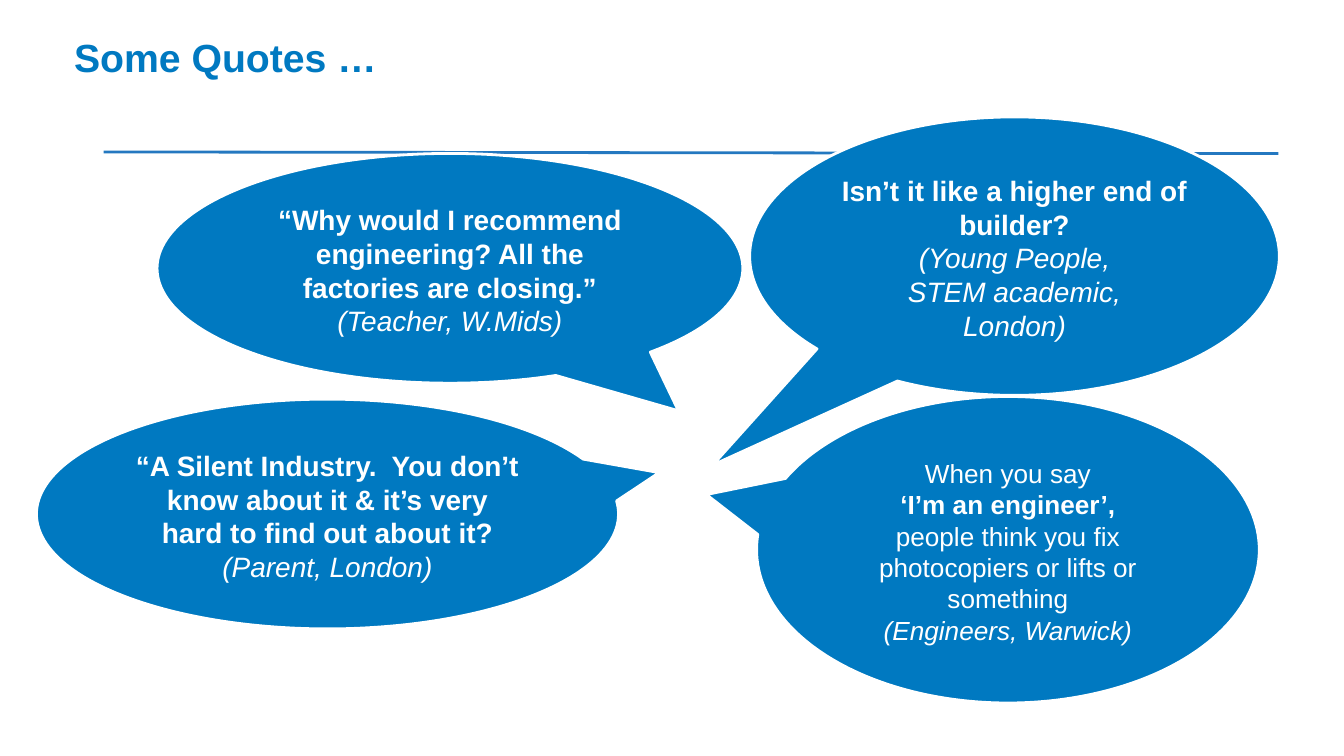
from pptx import Presentation
from pptx.dml.color import RGBColor
from pptx.enum.shapes import MSO_CONNECTOR, MSO_SHAPE
from pptx.enum.text import MSO_ANCHOR, PP_ALIGN
from pptx.oxml.ns import qn
from pptx.util import Cm, Pt
from lxml import etree

CALLOUT = MSO_SHAPE.OVAL_CALLOUT
STRAIGHT = MSO_CONNECTOR.STRAIGHT
TOP, MIDDLE = MSO_ANCHOR.TOP, MSO_ANCHOR.MIDDLE
CENTER = PP_ALIGN.CENTER

COLORS = {"blue": "0079C1", "rule": "2478C0", "white": "FFFFFF"}
FONT = "Arial"
PLAIN, BOLD, ITALIC = (False, False), (True, False), (False, True)

QUOTES = [
    {"box": (14.17, 2.21, 10.01, 5.26), "tail": (-0.57, 0.75), "size": 15, "anchor": TOP,
     "text": [[("Isn’t it like a higher end of builder?", BOLD)],
              [("(Young People,", ITALIC)],
              [("STEM academic,", ITALIC)],
              [("London)", ITALIC)]]},
    {"box": (0.69, 7.54, 11, 4.34), "tail": (0.57, -0.18), "size": 15, "anchor": TOP,
     "text": [[("“A Silent Industry.  You don’t know about it & it’s very hard "
                "to find out about it?", BOLD)],
              [("(Parent, London)", ITALIC)]]},
    {"box": (14.3, 7.49, 9.5, 5.79), "tail": (-0.6, -0.18), "size": 14, "anchor": TOP,
     "text": [[("When you say", PLAIN),
               ("‘I’m an engineer’,", BOLD),
               ("people think you fix photocopiers or lifts or something", PLAIN)],
              [("(Engineers, Warwick)", ITALIC)]]},
    {"box": (2.97, 2.9, 11.07, 4.34), "tail": (0.39, 0.62), "size": 15, "anchor": MIDDLE,
     "text": [[("“Why would I recommend engineering? All the factories are closing.”", BOLD)],
              [("(Teacher, W.Mids)", ITALIC)]]},
]


def rgb(name):
    return RGBColor.from_string(COLORS[name])


def set_frame(tf, anchor, left, top, right, bottom):
    tf.word_wrap = True
    tf.vertical_anchor = anchor
    tf.margin_left, tf.margin_top = Cm(left), Cm(top)
    tf.margin_right, tf.margin_bottom = Cm(right), Cm(bottom)


def add_run(p, text, size, color, style):
    r = p.add_run()
    r.text = text
    r.font.name = FONT
    r.font.size = Pt(size)
    r.font.color.rgb = rgb(color)
    r.font.bold, r.font.italic = style


def add_heading(s, box):
    x, y, w, h = box
    title = s.shapes.add_textbox(Cm(x), Cm(y), Cm(w), Cm(h))
    set_frame(title.text_frame, MIDDLE, 0.18, 0.1, 0.18, 0.1)
    add_run(title.text_frame.paragraphs[0], "Some Quotes …", 21, "blue", BOLD)

    rule = s.shapes.add_connector(STRAIGHT, Cm(x + 0.74), Cm(y + 2.34),
                                  Cm(x + 22.94), Cm(y + 2.37))
    rule.line.color.rgb = rgb("rule")
    rule.line.width = Pt(1.5)
    etree.SubElement(rule._element.spPr, qn("a:effectLst"))


def add_quote(s, box, tail, size, anchor, text):
    sp = s.shapes.add_shape(CALLOUT, *[Cm(v) for v in box])
    sp.adjustments[0], sp.adjustments[1] = tail
    sp.shadow.inherit = False
    sp.fill.solid()
    sp.fill.fore_color.rgb = rgb("blue")
    sp.line.color.rgb = rgb("white")
    sp.line.width = Pt(1.5)
    tf = sp.text_frame
    set_frame(tf, anchor, 0.23, 0.3, 0.23, 0.23)
    for i, lines in enumerate(text):
        p = tf.add_paragraph() if i else tf.paragraphs[0]
        p.alignment = CENTER
        p.font.size = Pt(size)
        for j, (words, style) in enumerate(lines):
            if j:
                p.add_line_break()
            add_run(p, words, size, "white", style)


def main():
    prs = Presentation()
    prs.slide_width, prs.slide_height = Cm(25.4), Cm(14.28)
    s = prs.slides.add_slide(prs.slide_layouts[6])
    add_heading(s, (1.22, 0.53, 17.09, 1.09))
    for quote in QUOTES:
        add_quote(s, **quote)
    prs.save("out.pptx")


if __name__ == "__main__":
    main()
